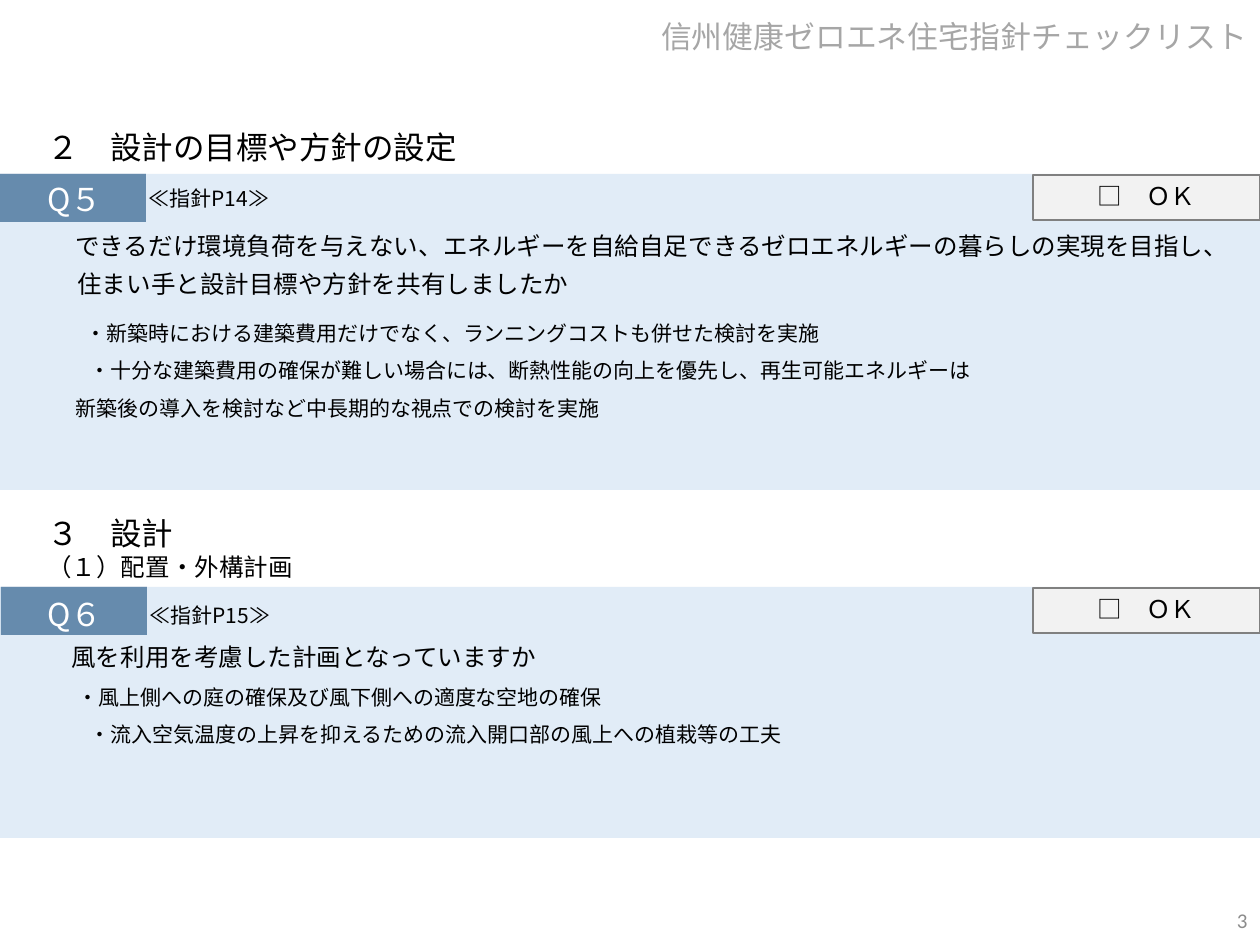
from lxml.etree import SubElement
from pptx import Presentation
from pptx.dml.color import RGBColor as RGB
from pptx.enum.shapes import MSO_SHAPE as SHAPE
from pptx.enum.text import MSO_ANCHOR as ANCHOR, PP_ALIGN as ALIGN
from pptx.oxml.ns import qn
from pptx.util import Emu, Pt

SCALE = 914400 / 126
W, H = 1260, 945
COLORS = {"navy": "1F4E79", "panel": "BDD7EE", "button": "F2F2F2", "border": "808080",
          "title": "A6A6A6", "number": "8C8C8C", "black": "000000", "white": "FFFFFF"}


def px(n):
    return Emu(round(n * SCALE))


def para(text, size, color="black", indent=0, **fmt):
    return {"text": text, "size": size, "color": color, "indent": indent, "fmt": fmt}


class Deck:
    font = "Noto Sans CJK JP"

    def __init__(self):
        self.prs = Presentation()
        self.prs.slide_width, self.prs.slide_height = px(W), px(H)
        self.s = self.prs.slides.add_slide(self.prs.slide_layouts[6])

    def rect(self, box, fill, line=None, alpha=None):
        sp = self.s.shapes.add_shape(SHAPE.RECTANGLE, *map(px, box))
        sp.shadow.inherit = False
        sp.fill.solid()
        sp.fill.fore_color.rgb = RGB.from_string(COLORS[fill])
        if alpha:
            clr = sp._element.spPr.find(qn("a:solidFill"))[0]
            SubElement(clr, qn("a:alpha"), val=str(alpha * 1000))
        if line:
            sp.line.color.rgb = RGB.from_string(COLORS[line])
            sp.line.width = Pt(0.75)
        else:
            sp.line.fill.background()
        return sp

    def set_text(self, sp, paras, anchor=ANCHOR.TOP, font=None):
        tf = sp.text_frame
        for key, value in {"word_wrap": True, "vertical_anchor": anchor}.items():
            setattr(tf, key, value)
        for i, item in enumerate(paras):
            p = tf.paragraphs[0] if i == 0 else tf.add_paragraph()
            for key, value in {"alignment": ALIGN.LEFT, **item["fmt"]}.items():
                setattr(p, key, value)
            if item["indent"]:
                p._p.get_or_add_pPr().set("marL", str(px(item["indent"])))
            r = p.add_run()
            r.text = item["text"]
            for key, value in {"size": Pt(item["size"]), "name": font or self.font}.items():
                setattr(r.font, key, value)
            r.font.color.rgb = RGB.from_string(COLORS[item["color"]])
            SubElement(r._r.get_or_add_rPr(), qn("a:ea"), typeface=font or self.font)

    def text(self, box, paras, **kw):
        self.set_text(self.s.shapes.add_textbox(*map(px, box)), paras, **kw)

    def question(self, top, height, left, label, ref, ref_top, body_top, items):
        # Label block under a translucent panel
        self.rect((left, top, 146, 48), "navy")
        self.rect((0, top, W, height), "panel", alpha=45)
        # Question and its points
        head = para(label, 18, "white", line_spacing=0.9)
        self.text((35, body_top, 1188, height - 12), [head, *items])
        # Check box and guideline page
        ok = self.rect((1033, top + 1, 227, 45), "button", line="border")
        self.set_text(ok, [para("□　ＯＫ", 14, alignment=ALIGN.CENTER)])
        self.text((left + 126, ref_top, 166, 38), [para(ref, 12, alignment=ALIGN.CENTER)])


def ask(text, indent, before=7):
    return para(text, 14, indent=indent, line_spacing=0.9, space_before=Pt(before))


def point(text, indent, before=7, **fmt):
    return para(text, 12, indent=indent, space_before=Pt(before), **fmt)


def main():
    d = Deck()

    # Page title
    d.text((0, 0, W, 77), [para("信州健康ゼロエネ住宅指針チェックリスト", 17.6, "title",
                                alignment=ALIGN.RIGHT, line_spacing=0.9)], anchor=ANCHOR.MIDDLE)

    # Section 2
    d.text((35, 122, 546, 50), [para("２　設計の目標や方針の設定", 18)])
    d.question(174, 316, 0, "Q５", "≪指針P14≫", 179, 178, [
        ask("できるだけ環境負荷を与えない、エネルギーを自給自足できるゼロエネルギーの暮らしの実現を目指し、", 28, 9),
        ask("住まい手と設計目標や方針を共有しましたか", 30),
        point("・新築時における建築費用だけでなく、ランニングコストも併せた検討を実施", 38, 5, line_spacing=1.5),
        point("・十分な建築費用の確保が難しい場合には、断熱性能の向上を優先し、再生可能エネルギーは", 42),
        point("新築後の導入を検討など中長期的な視点での検討を実施", 28)])

    # Section 3
    d.text((35, 508, 480, 81), [para("３　設計", 18), para("（１）配置・外構計画", 14)])
    d.question(587, 251, 1, "Q６", "≪指針P15≫", 596, 593, [
        ask("風を利用を考慮した計画となっていますか", 24),
        point("・風上側への庭の確保及び風下側への適度な空地の確保", 30),
        point("・流入空気温度の上昇を抑えるための流入開口部の風上への植栽等の工夫", 42)])

    # Page number
    d.text((976, 895, 284, 50), [para("3", 12, "number", alignment=ALIGN.RIGHT)],
           anchor=ANCHOR.MIDDLE, font="Calibri")

    d.prs.save("out.pptx")


if __name__ == "__main__":
    main()
